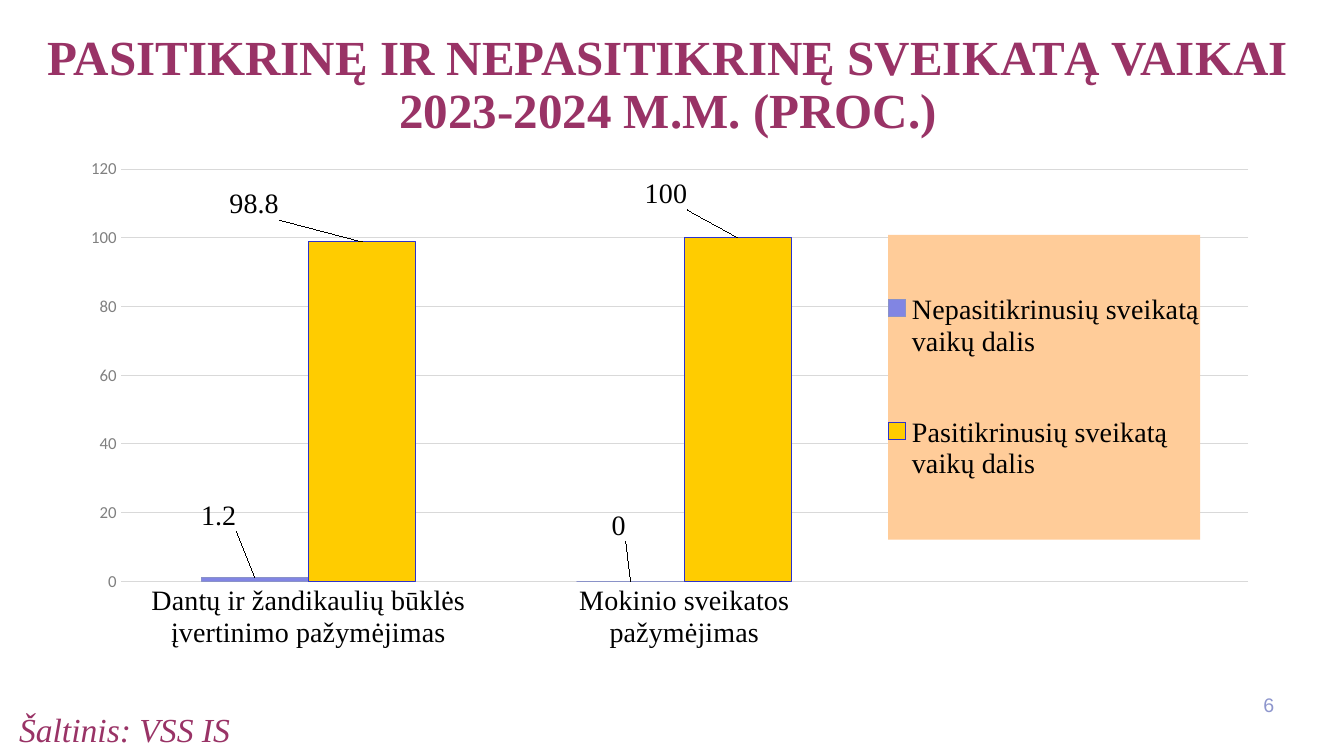
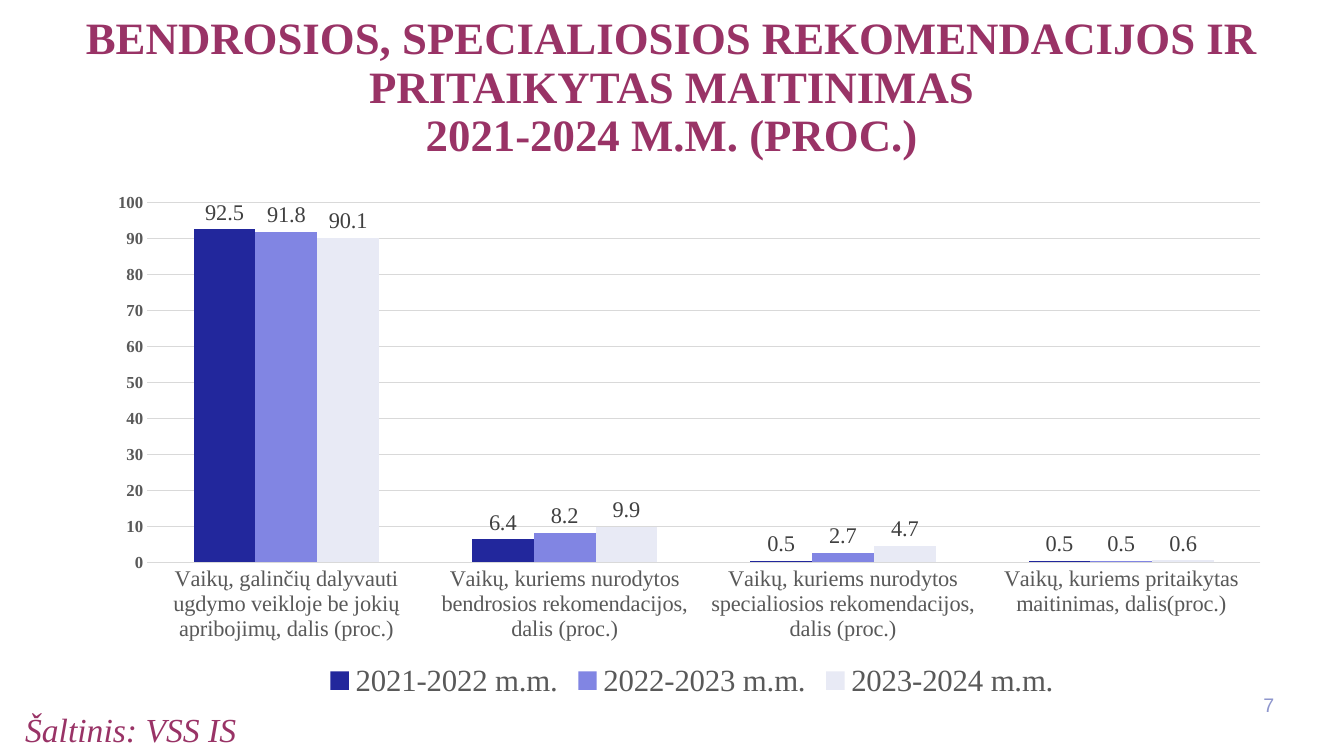
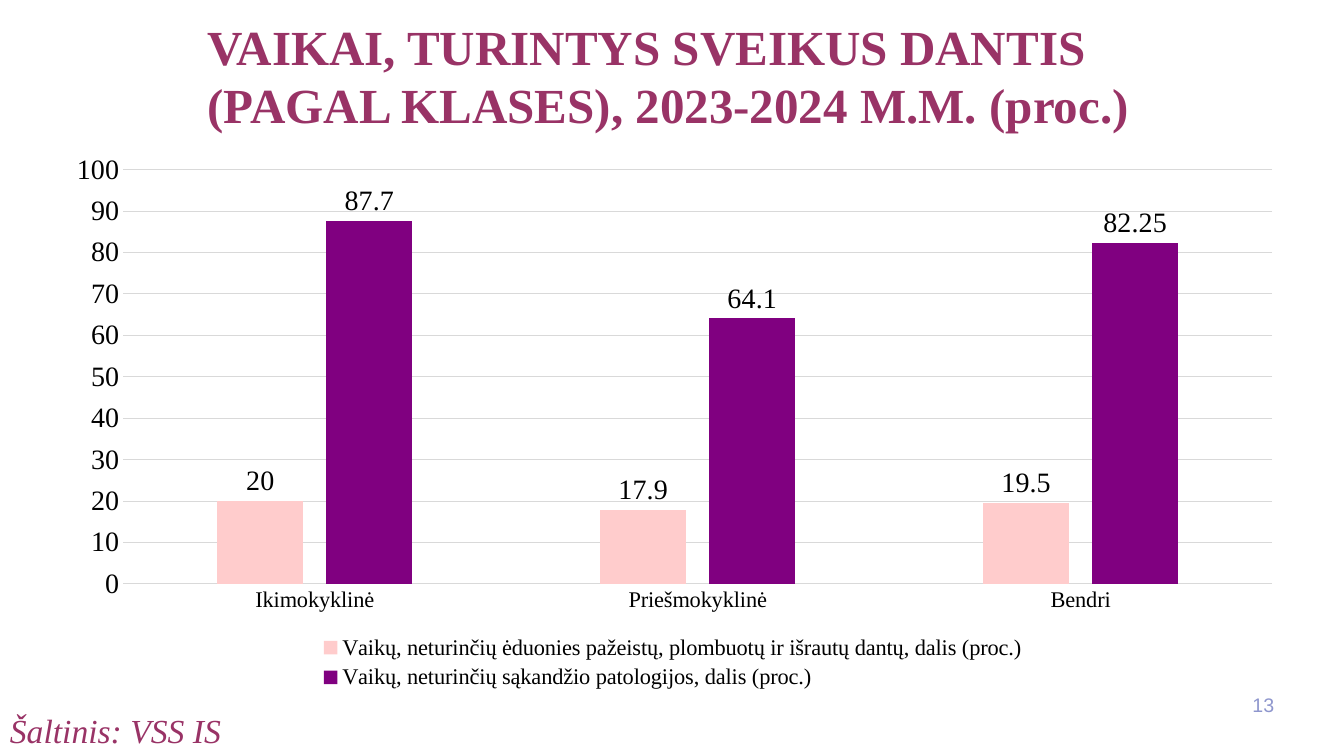
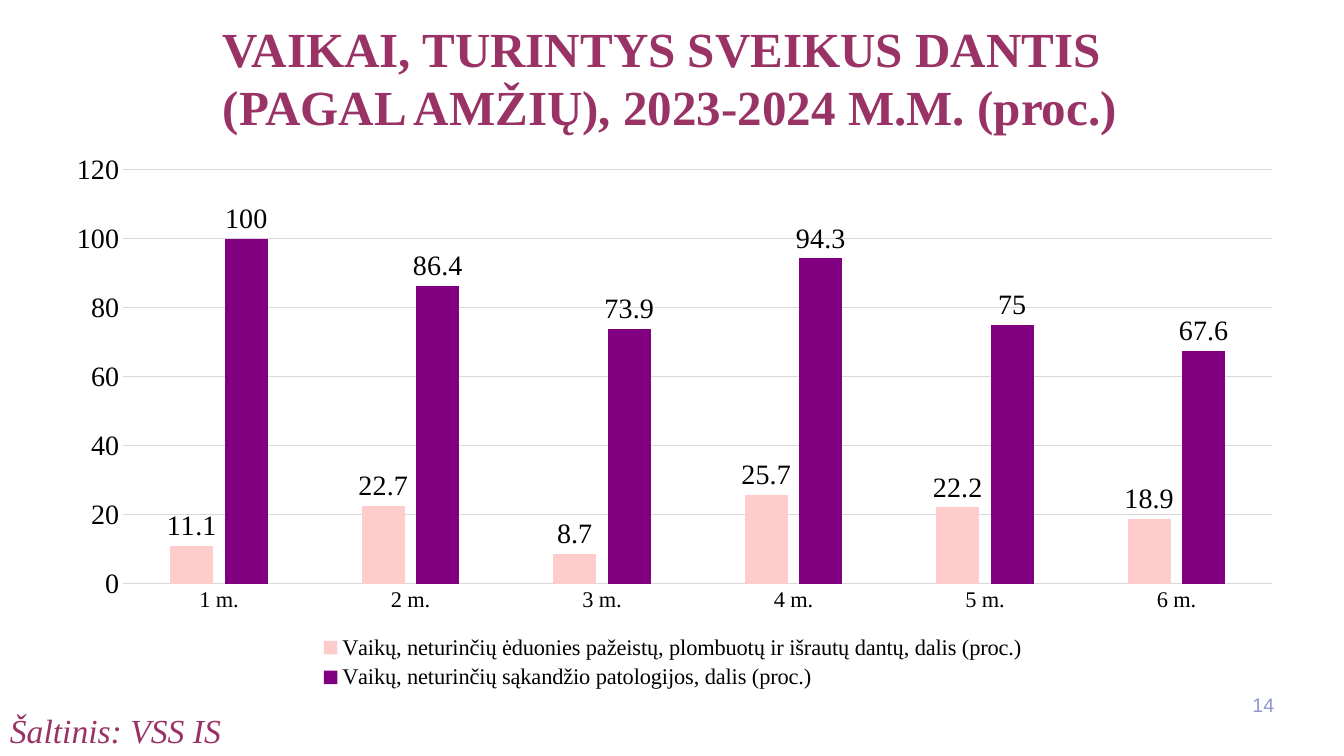
import dataclasses

import pptx
import pptx.chart.data
import pptx.dml.color
import pptx.enum.chart
import pptx.enum.text
import pptx.oxml
import pptx.oxml.ns
import pptx.util

Pt = pptx.util.Pt
WIDE, HIGH = pptx.util.Inches(13.33), pptx.util.Inches(7.5)


# Shared look: colours, fonts and type sizes
@dataclasses.dataclass(frozen=True)
class Theme:
    serif: str = "Times New Roman"
    sans: str = "Arial"
    plain: str = "Calibri"
    plum: str = "993366"
    mist: str = "8E96CD"
    black: str = "000000"
    ash: str = "808080"
    slate: str = "595959"
    coal: str = "404040"
    grid: str = "D9D9D9"
    peach: str = "FFCC99"
    navy: str = "22279C"
    lilac: str = "8185E3"
    pale: str = "E8EAF5"
    gold: str = "FFCC00"
    pink: str = "FFCCCC"
    purple: str = "800080"
    rim: str = "8A92C8"
    blue: str = "2D33CB"
    head: int = 35
    dense: int = 32
    source: int = 24
    number: int = 14
    big: int = 22
    label: int = 20
    small: int = 16
    tick: int = 12
    base: int = 10


LOOK = Theme()


# Chart style: a type is (size, colour), a box is in percent of the slide
@dataclasses.dataclass(frozen=True)
class Style:
    box: tuple
    plot: tuple
    top: int
    step: int
    cat: tuple
    val: tuple
    key: tuple
    label: tuple
    face: str = LOOK.serif
    bold: bool = False
    base: bool = True
    gap: int = 150
    lap: int = 0


CHECK = Style(
    (5.4, 19.2, 89.25, 79.07), (0.04, 0.04, 0.94, 0.69), 120, 20,
    cat=(LOOK.label, LOOK.black), val=(LOOK.tick, LOOK.ash),
    key=(LOOK.label, LOOK.black), label=(LOOK.label, LOOK.black),
    face=LOOK.plain, base=False)
MEALS = Style(
    (7.43, 24, 88.12, 69.07), (0.04, 0.04, 0.94, 0.69), 100, 10,
    cat=(LOOK.small, LOOK.slate), val=(LOOK.tick, LOOK.slate),
    key=(LOOK.big, LOOK.slate), label=(LOOK.small, LOOK.coal), bold=True)
TEETH = Style(
    (3.6, 18.8, 92.92, 73.07), (0.06, 0.05, 0.92, 0.75), 100, 10,
    cat=(LOOK.small, LOOK.black), val=(LOOK.label, LOOK.black),
    key=(LOOK.small, LOOK.black), label=(LOOK.label, LOOK.black),
    gap=219, lap=-27)


def rgb(code):
    return pptx.dml.color.RGBColor.from_string(code)


def place(box):
    x, y, w, h = box
    return [round(n * side / 100)
            for n, side in ((x, WIDE), (y, HIGH), (w, WIDE), (h, HIGH))]


def ink(font, size, color, face=LOOK.serif, bold=False, slant=False):
    font.size, font.name = Pt(size), face
    font.bold, font.italic = bold, slant
    font.color.rgb = rgb(color)


# Text parts
def write(slide, box, text, size, color, align="LEFT", space=None,
          anchor="TOP", **face):
    frame = slide.shapes.add_textbox(*place(box)).text_frame
    frame.word_wrap = True
    frame.vertical_anchor = getattr(pptx.enum.text.MSO_ANCHOR, anchor)
    frame.text = text
    for para in frame.paragraphs:
        para.alignment = getattr(pptx.enum.text.PP_ALIGN, align)
        para.line_spacing = space
        for run in para.runs:
            ink(run.font, size, color, **face)


def title(slide, box, text, size=LOOK.head, **more):
    write(slide, box, text, size, LOOK.plum, bold=True, **more)


def foot(slide, number, left=0, top=93.2):
    write(slide, (left, top, 50, 6.67), "Šaltinis: VSS IS",
          LOOK.source, LOOK.plum, slant=True)
    write(slide, (91.65, 90.53, 3.9, 5.33), str(number), LOOK.number,
          LOOK.mist, align="RIGHT", anchor="MIDDLE", face=LOOK.sans)


# Chart parts
def layout(after, **parts):
    """Put a manual layout behind the given chart element."""
    inner = "".join(f'<c:{k} val="{v}"/>' for k, v in parts.items())
    after.addnext(pptx.oxml.parse_xml(
        f'<c:layout {pptx.oxml.ns.nsdecls("c")}><c:manualLayout>{inner}'
        '</c:manualLayout></c:layout>'))


def pin(node, box, **first):
    x, y, w, h = box
    layout(node, **first, xMode="edge", yMode="edge", x=x, y=y, w=w, h=h)


def axes(chart, style):
    none = pptx.enum.chart.XL_TICK_MARK.NONE
    cat, val = chart.category_axis, chart.value_axis
    for axis in (cat, val):
        axis.major_tick_mark = axis.minor_tick_mark = none
        axis.format.line.fill.background()
    ink(cat.tick_labels.font, *style.cat)
    ink(val.tick_labels.font, *style.val, face=style.face, bold=style.bold)
    val.minimum_scale, val.maximum_scale = 0, style.top
    val.major_unit = style.step
    lines = [val.major_gridlines.format.line]
    if style.base:
        lines.append(cat.format.line)
    for line in lines:
        line.color.rgb, line.width = rgb(LOOK.grid), Pt(0.75)


def legend(chart, style):
    chart.has_legend = True
    key = chart.legend
    key.position = pptx.enum.chart.XL_LEGEND_POSITION.BOTTOM
    key.include_in_layout = False
    ink(key.font, *style.key)


def paint(series, style, fill, rim=None):
    series.format.fill.solid()
    series.format.fill.fore_color.rgb = rgb(fill)
    series.invert_if_negative = False
    if rim:
        series.format.line.color.rgb = rgb(rim)
        series.format.line.width = Pt(0.75)
    tags = series.data_labels
    tags.show_value = True
    tags.position = pptx.enum.chart.XL_LABEL_POSITION.OUTSIDE_END
    ink(tags.font, *style.label)


def bars(slide, style, cats, rows, fills):
    data = pptx.chart.data.CategoryChartData()
    data.categories = cats
    for name, vals in rows:
        data.add_series(name, vals)
    kind = pptx.enum.chart.XL_CHART_TYPE.COLUMN_CLUSTERED
    chart = slide.shapes.add_chart(kind, *place(style.box), data).chart
    chart.has_title = False
    ink(chart.font, LOOK.base, LOOK.black, face=LOOK.plain)
    plot = chart.plots[0]
    plot.gap_width, plot.overlap = style.gap, style.lap
    plot.vary_by_categories = False
    axes(chart, style)
    legend(chart, style)
    for series, fill in zip(plot.series, fills):
        paint(series, style, *fill)
    area = chart.element.find(".//" + pptx.oxml.ns.qn("c:plotArea"))
    for old in area.findall(pptx.oxml.ns.qn("c:layout")):
        area.remove(old)
    mark = pptx.oxml.parse_xml(f'<c:mark {pptx.oxml.ns.nsdecls("c")}/>')
    area.insert(0, mark)
    pin(mark, style.plot, layoutTarget="inner")
    area.remove(mark)
    return chart


def panel(chart, box, fill):
    """Give the legend its own place and a filled ground."""
    node = chart.element.find(".//" + pptx.oxml.ns.qn("c:legend"))
    for old in node.findall(pptx.oxml.ns.qn("c:layout")):
        node.remove(old)
    pin(node.find(pptx.oxml.ns.qn("c:legendPos")), box)
    node.find(pptx.oxml.ns.qn("c:overlay")).addnext(pptx.oxml.parse_xml(
        f'<c:spPr {pptx.oxml.ns.nsdecls("c", "a")}><a:solidFill>'
        f'<a:srgbClr val="{fill}"/></a:solidFill></c:spPr>'))


def shift(chart, style, moves):
    """Move single labels by shares of the chart's size."""
    for series, spots in zip(chart.plots[0].series, moves):
        for i, (x, y) in enumerate(spots):
            tag = series.points[i].data_label
            ink(tag.font, *style.label)
            tag.position = pptx.enum.chart.XL_LABEL_POSITION.OUTSIDE_END
        nodes = chart.element.findall(".//" + pptx.oxml.ns.qn("c:ser"))
        tags = nodes[series.index].iter(pptx.oxml.ns.qn("c:dLbl"))
        for tag, (x, y) in zip(tags, spots):
            layout(tag.find(pptx.oxml.ns.qn("c:idx")), x=x, y=y)


# Slides
def check(slide):
    title(slide, (-0.9, 3.73, 101.25, 18.4),
          "PASITIKRINĘ IR NEPASITIKRINĘ SVEIKATĄ VAIKAI "
          "2023-2024 M.M. (PROC.)", align="CENTER", space=0.9)
    foot(slide, 6, 0.68, 93.07)
    chart = bars(
        slide, CHECK,
        ["Dantų ir žandikaulių būklės įvertinimo pažymėjimas",
         "Mokinio sveikatos pažymėjimas", ""],
        [("Nepasitikrinusių sveikatą vaikų dalis", (1.2, 0, None)),
         ("Pasitikrinusių sveikatą vaikų dalis", (98.8, 100, None))],
        [(LOOK.lilac, LOOK.rim), (LOOK.gold, LOOK.blue)])
    panel(chart, (0.68, 0.15, 0.26, 0.51), LOOK.peach)
    shift(chart, CHECK, [[(-0.03, -0.07), (-0.01, -0.06)],
                         [(-0.09, -0.03), (-0.06, -0.04)]])


def meals(slide):
    title(slide, (-0.83, 1.47, 101.63, 18.4),
          "BENDROSIOS, SPECIALIOSIOS REKOMENDACIJOS IR PRITAIKYTAS "
          "MAITINIMAS\v2021-2024 M.M. (PROC.)", LOOK.dense,
          align="CENTER", space=0.9)
    foot(slide, 7, 1.13, 93.07)
    bars(slide, MEALS,
         ["Vaikų, galinčių dalyvauti ugdymo veikloje be jokių apribojimų, "
          "dalis (proc.)",
          "Vaikų, kuriems nurodytos bendrosios rekomendacijos, dalis (proc.)",
          "Vaikų, kuriems nurodytos specialiosios rekomendacijos, "
          "dalis (proc.)",
          "Vaikų, kuriems pritaikytas maitinimas, dalis(proc.)"],
         [("2021-2022 m.m.", (92.5, 6.4, 0.5, 0.5)),
          ("2022-2023 m.m.", (91.8, 8.2, 2.7, 0.5)),
          ("2023-2024 m.m.", (90.1, 9.9, 4.7, 0.6))],
         [(LOOK.navy,), (LOOK.lilac,), (LOOK.pale,)])


def teeth(slide, number, box, group, style, cats, sound, bite):
    title(slide, box, f"VAIKAI, TURINTYS SVEIKUS DANTIS (PAGAL {group}), "
                      "2023-2024 M.M. (proc.)")
    foot(slide, number)
    bars(slide, style, cats,
         [("Vaikų, neturinčių ėduonies pažeistų, plombuotų ir išrautų "
           "dantų, dalis (proc.)", sound),
          ("Vaikų, neturinčių sąkandžio patologijos, dalis (proc.)", bite)],
         [(LOOK.pink,), (LOOK.purple,)])


def main():
    deck = pptx.Presentation()
    deck.slide_width, deck.slide_height = WIDE, HIGH
    blank = deck.slide_layouts[6]
    one, two, three, four = [deck.slides.add_slide(blank) for _ in range(4)]
    check(one)
    meals(two)
    teeth(three, 13, (14.7, 1.47, 73.35, 17.07), "KLASES", TEETH,
          ["Ikimokyklinė", "Priešmokyklinė", "Bendri"],
          (20, 17.9, 19.5), (87.7, 64.1, 82.25))
    teeth(four, 14, (15.83, 1.73, 68.33, 17.07), "AMŽIŲ",
          dataclasses.replace(TEETH, top=120, step=20),
          [f"{n} m." for n in range(1, 7)],
          (11.1, 22.7, 8.7, 25.7, 22.2, 18.9),
          (100, 86.4, 73.9, 94.3, 75, 67.6))
    deck.save("out.pptx")


if __name__ == "__main__":
    main()
